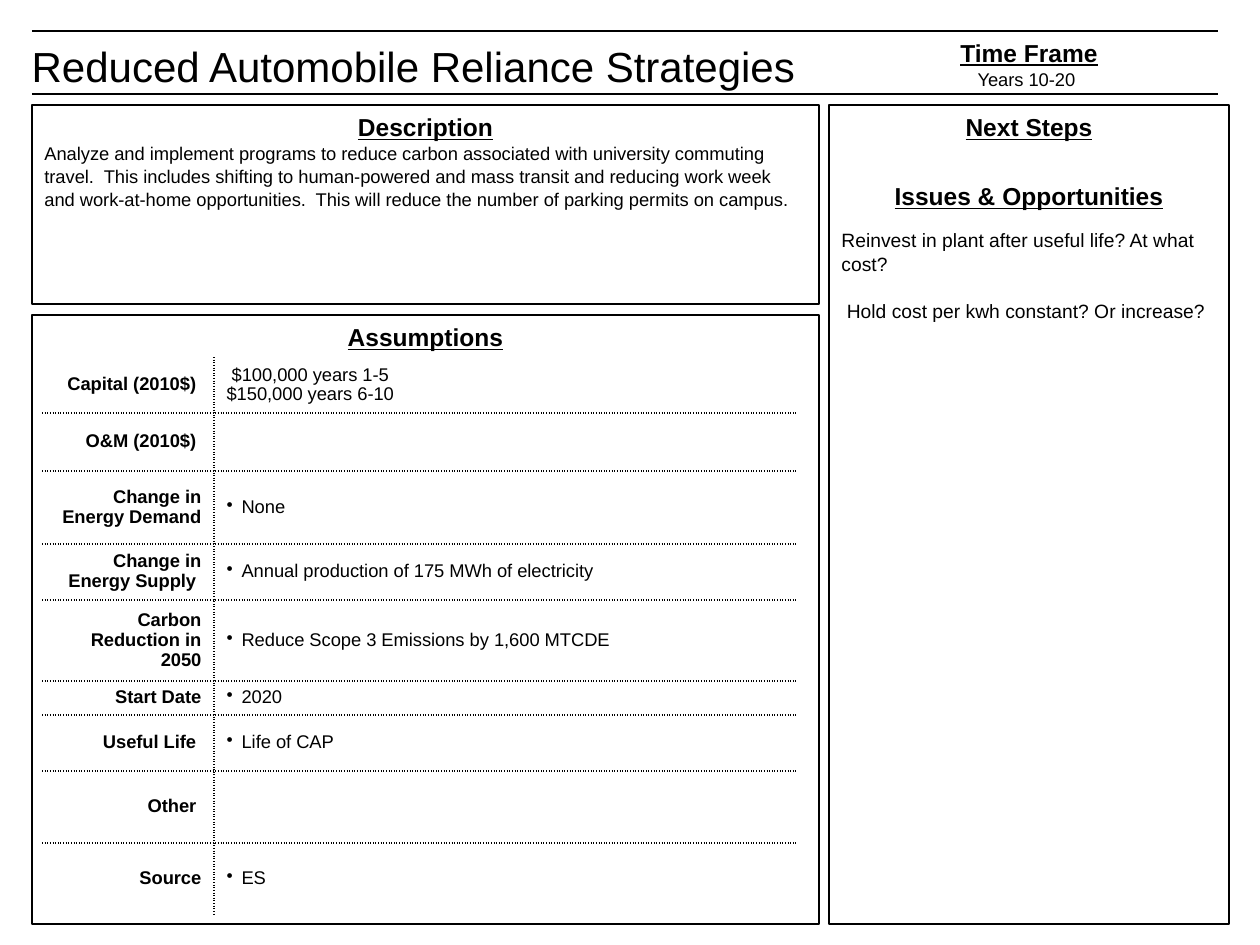
from dataclasses import dataclass

from lxml import etree
from pptx import Presentation
from pptx import util as u
from pptx.dml.color import RGBColor
from pptx.enum import shapes, text
from pptx.oxml import ns

ALIGN, ANCHOR = text.PP_ALIGN, text.MSO_ANCHOR


@dataclass(frozen=True)
class Theme:
    ink: RGBColor = RGBColor(0, 0, 0)
    font: str = "Arial"
    title: float = 24
    heading: float = 14
    note: float = 11
    body: float = 10.5
    rule: float = 1.25
    border: float = 1
    leading: float = 1.04


@dataclass(frozen=True)
class Box:
    x: int
    y: int
    w: int
    h: int

    def emu(self) -> tuple:
        return tuple(px(v) for v in (self.x, self.y, self.w, self.h))


@dataclass(frozen=True)
class Assumption:
    label: str
    height: int
    values: tuple = ()
    bullet: bool = True


THEME = Theme()
PX_PER_INCH = 126
TITLE = Box(19, 33, 809, 63)
TIME_FRAME = Box(829, 32, 400, 63)
DESCRIPTION = Box(32, 105, 787, 199)
ASSUMPTIONS = Box(32, 315, 787, 609)
NEXT_STEPS = Box(829, 105, 400, 819)
TABLE = Box(42, 357, 756, 558)
LABEL_WIDTH = 172
RULES_Y = (31, 94)
RULE_X = (32, 1218)

ROWS = (
    Assumption("Capital (2010$) ", 56,
               (" $100,000 years 1-5", "$150,000 years 6-10"), bullet=False),
    Assumption("O&M (2010$) ", 58),
    Assumption("Change in Energy Demand", 73, ("None",)),
    Assumption("Change in Energy Supply ", 56,
               ("Annual production of 175 MWh of electricity",)),
    Assumption("Carbon Reduction in 2050", 81,
               ("Reduce Scope 3 Emissions by 1,600 MTCDE",)),
    Assumption("Start Date", 34, ("2020",)),
    Assumption("Useful Life ", 56, ("Life of CAP",)),
    Assumption("Other ", 72),
    Assumption("Source", 72, ("ES",)),
)


def px(n: int) -> u.Emu:
    return u.Emu(round(n * 914400 / PX_PER_INCH))


def add_text(tf, content: str, *, size=THEME.body, bold=False, underline=False,
             align=ALIGN.LEFT, before=0, leading=THEME.leading, bullet=False):
    """Fill the first paragraph if it is free, otherwise append one."""
    p = tf.paragraphs[0] if not tf.text else tf.add_paragraph()
    p.alignment = align
    p.line_spacing = leading
    p.space_before = u.Pt(before)
    p.space_after = u.Pt(0)
    r = p.add_run()
    r.text = content
    f = r.font
    f.name, f.size, f.bold, f.underline = THEME.font, u.Pt(size), bold, underline
    f.color.rgb = THEME.ink
    if bullet:
        pPr = p._p.get_or_add_pPr()
        indent = px(15)
        pPr.set("marL", str(indent))
        pPr.set("indent", str(-indent))
        etree.SubElement(pPr, ns.qn("a:buChar"), char="•")


def add_heading(tf, content: str, before=0) -> None:
    add_text(tf, content, size=THEME.heading, bold=True, underline=True,
             align=ALIGN.CENTER, before=before)


def add_title(s, content: str) -> None:
    sp = s.shapes.title
    sp.left, sp.top, sp.width, sp.height = TITLE.emu()
    tf = sp.text_frame
    tf.word_wrap = False
    tf.auto_size = text.MSO_AUTO_SIZE.NONE
    tf.vertical_anchor = ANCHOR.MIDDLE
    add_text(tf, content, size=THEME.title)


def add_rule(s, y: int) -> None:
    line = s.shapes.add_connector(shapes.MSO_CONNECTOR.STRAIGHT,
                                  px(RULE_X[0]), px(y), px(RULE_X[1]), px(y))
    line.line.color.rgb = THEME.ink
    line.line.width = u.Pt(THEME.rule)
    etree.SubElement(line._element.spPr, ns.qn("a:effectLst"))


def add_panel(s, box: Box, heading: str):
    """Draw a framed panel with its heading and return its text frame."""
    sp = s.shapes.add_shape(shapes.MSO_SHAPE.RECTANGLE, *box.emu())
    sp.shadow.inherit = False
    sp.fill.background()
    sp.line.color.rgb = THEME.ink
    sp.line.width = u.Pt(THEME.rule)
    tf = sp.text_frame
    tf.word_wrap = True
    tf.vertical_anchor = ANCHOR.TOP
    add_heading(tf, heading)
    return tf


def set_borders(cell, dotted: str) -> None:
    """Dot the sides named in dotted (letters of LRTB) and clear the others."""
    tcPr = cell._tc.get_or_add_tcPr()
    for i, side in enumerate("LRTB"):
        ln = etree.Element(ns.qn(f"a:ln{side}"), w=str(u.Pt(THEME.border)))
        if side in dotted:
            fill = etree.SubElement(ln, ns.qn("a:solidFill"))
            etree.SubElement(fill, ns.qn("a:srgbClr"), val=str(THEME.ink))
            etree.SubElement(ln, ns.qn("a:prstDash"), val="sysDot")
        else:
            etree.SubElement(ln, ns.qn("a:noFill"))
        tcPr.insert(i, ln)


def add_assumptions(s, rows: tuple) -> None:
    table = s.shapes.add_table(len(rows), 2, *TABLE.emu()).table
    table.first_row = table.horz_banding = False
    table.columns[0].width = px(LABEL_WIDTH)
    table.columns[1].width = px(TABLE.w - LABEL_WIDTH)
    for i, row in enumerate(rows):
        table.rows[i].height = px(row.height)
        label, value = table.cell(i, 0), table.cell(i, 1)
        add_text(label.text_frame, row.label, bold=True, align=ALIGN.RIGHT,
                 leading=0.97)
        for v in row.values:
            add_text(value.text_frame, v, bullet=row.bullet, leading=0.97)
        across = ("T" if i else "") + ("B" if i < len(rows) - 1 else "")
        for cell, side in ((label, "R"), (value, "L")):
            cell.fill.background()
            cell.vertical_anchor = ANCHOR.MIDDLE
            set_borders(cell, side + across)


def main() -> None:
    prs = Presentation()
    prs.slide_width, prs.slide_height = u.Inches(10), u.Inches(7.5)
    s = prs.slides.add_slide(prs.slide_layouts[5])
    add_title(s, "Reduced Automobile Reliance Strategies")
    for y in RULES_Y:
        add_rule(s, y)

    tf = add_panel(s, DESCRIPTION, "Description")
    add_text(tf, "Analyze and implement programs to reduce carbon associated "
             "with university commuting travel.  This includes shifting to "
             "human-powered and mass transit and reducing work week and "
             "work-at-home opportunities.  This will reduce the number of "
             "parking permits on campus.")
    add_panel(s, ASSUMPTIONS, "Assumptions")

    tf = s.shapes.add_textbox(*TIME_FRAME.emu()).text_frame
    tf.word_wrap = True
    tf.vertical_anchor = ANCHOR.MIDDLE
    add_heading(tf, "Time Frame")
    add_text(tf, "Years 10-20 ", align=ALIGN.CENTER)

    tf = add_panel(s, NEXT_STEPS, "Next Steps")
    add_heading(tf, "Issues & Opportunities", before=22)
    add_text(tf, "Reinvest in plant after useful life? At what cost?",
             size=THEME.note, before=9.5)
    add_text(tf, " Hold cost per kwh constant? Or increase?",
             size=THEME.note, before=13)

    add_assumptions(s, ROWS)
    prs.save("out.pptx")


if __name__ == "__main__":
    main()
